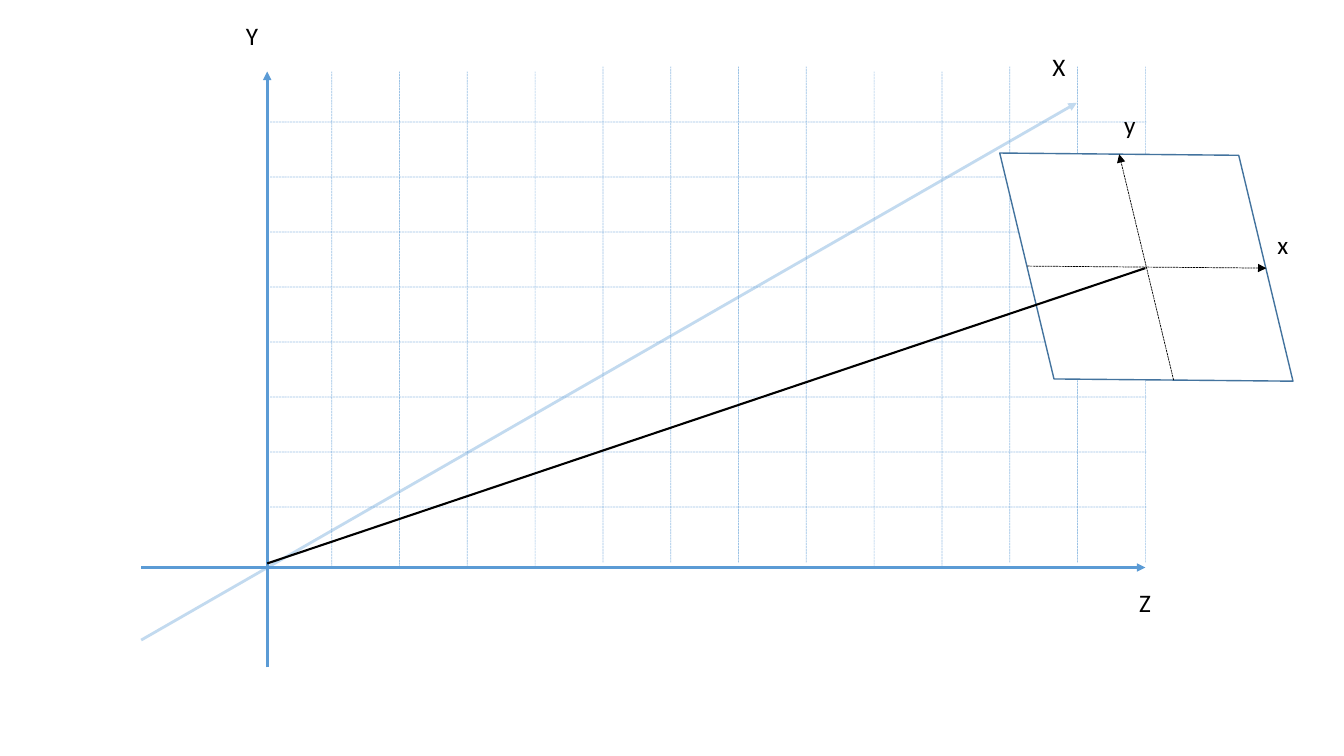
"""Draw a Z-Y grid with three axes and a tilted image plane."""
from lxml.etree import SubElement
from pptx import Presentation
from pptx.dml.color import RGBColor
from pptx.enum.dml import MSO_LINE
from pptx.enum.shapes import MSO_CONNECTOR, MSO_SHAPE
from pptx.enum.text import MSO_AUTO_SIZE
from pptx.oxml.ns import qn
from pptx.util import Inches, Pt

THEME = {
    "axis": RGBColor.from_string("5B9BD5"),
    "edge": RGBColor.from_string("43739E"),
    "ink": RGBColor.from_string("000000"),
    "paper": RGBColor.from_string("FFFFFF"),
    "font": "Calibri",
    "size": Pt(18),
}
STYLES = {
    "axis": {"color": "axis", "width": 2, "arrow": True},
    "depth": {"color": "axis", "width": 2, "alpha": 37, "arrow": True},
    "grid": {"color": "axis", "width": 0.5, "alpha": 60, "dash": True},
    "plane": {"color": "ink", "width": 0.5, "dash": True, "arrow": True},
    "ray": {"color": "ink", "width": 1.5},
}
Z_AXIS = ("axis", (1.4, 5.63), (11.36, 5.63))
X_AXIS = ("depth", (1.4, 6.35), (10.68, 1.02))
Y_AXIS = ("axis", (2.65, 6.62), (2.65, 0.71))
PLANE_AXES = [
    ("plane", (11.64, 3.77), (11.1, 1.53)),
    ("plane", (10.19, 2.64), (12.56, 2.66)),
]
RAY = ("ray", (2.65, 5.59), (11.36, 2.66))
PLANE = {"box": (9.93, 1.5, 2.88, 2.3), "rotation": 256.5}
LABELS = [
    ("X", 10.34, 0.46, 0.33),
    ("Y", 2.34, 0.15, 0.32),
    ("Z", 11.2, 5.78, 0.32),
    ("y", 11.05, 1.04, 0.32),
    ("x", 12.57, 2.23, 0.31),
]
ROWS = {"first": 1.21, "last": 5.03, "count": 8}
COLUMNS = {"first": 3.29, "last": 11.36, "count": 13}
RAISED_COLUMNS = {4, 5, 6, 7, 10, 11, 12}


def spread(first, last, count):
    """Return evenly spaced positions."""
    return [first + (last - first) * i / (count - 1) for i in range(count)]


def grid_lines():
    """Return the horizontal and vertical grid lines."""
    rows = [("grid", (2.68, y), (11.37, y)) for y in spread(**ROWS)]
    columns = []
    for i, x in enumerate(spread(**COLUMNS)):
        lift = 0.05 if i in RAISED_COLUMNS else 0
        columns.append(("grid", (x, 5.63 - lift), (x, 0.71 - lift)))
    return rows + columns


def add_line(s, style, start, end):
    """Add a straight line in a named style."""
    look = STYLES[style]
    ends = [Inches(v) for v in start + end]
    c = s.shapes.add_connector(MSO_CONNECTOR.STRAIGHT, *ends)
    c.line.color.rgb = THEME[look["color"]]
    c.line.width = Pt(look["width"])
    if look.get("dash"):
        c.line.dash_style = MSO_LINE.SQUARE_DOT
    ln = c.line._get_or_add_ln()
    if "alpha" in look:
        clr = ln.find(".//" + qn("a:srgbClr"))
        SubElement(clr, qn("a:alpha"), val=str(look["alpha"] * 1000))
    if look.get("arrow"):
        SubElement(ln, qn("a:tailEnd"), type="triangle")
    SubElement(c._element.spPr, qn("a:effectLst"))


def add_plane(s):
    """Add the tilted image plane."""
    box = [Inches(v) for v in PLANE["box"]]
    sp = s.shapes.add_shape(MSO_SHAPE.PARALLELOGRAM, *box)
    sp.rotation = PLANE["rotation"]
    sp.shadow.inherit = False
    sp.fill.solid()
    sp.fill.fore_color.rgb = THEME["paper"]
    sp.line.color.rgb = THEME["edge"]
    sp.line.width = Pt(1)


def add_label(s, text, left, top, width):
    """Add an axis label."""
    box = [Inches(v) for v in (left, top, width, 0.4)]
    tf = s.shapes.add_textbox(*box).text_frame
    for name, value in {"word_wrap": False, "auto_size": MSO_AUTO_SIZE.SHAPE_TO_FIT_TEXT}.items():
        setattr(tf, name, value)
    r = tf.paragraphs[0].add_run()
    r.text = text
    for name, value in {"name": THEME["font"], "size": THEME["size"]}.items():
        setattr(r.font, name, value)
    r.font.color.rgb = THEME["ink"]


def main():
    """Build and save the slide."""
    prs = Presentation()
    prs.slide_width, prs.slide_height = Inches(13.33), Inches(7.5)
    s = prs.slides.add_slide(prs.slide_layouts[6])
    for line in [Z_AXIS, *grid_lines(), X_AXIS, Y_AXIS]:
        add_line(s, *line)
    add_plane(s)
    for line in [*PLANE_AXES, RAY]:
        add_line(s, *line)
    for label in LABELS:
        add_label(s, *label)
    prs.save("out.pptx")


if __name__ == "__main__":
    main()
